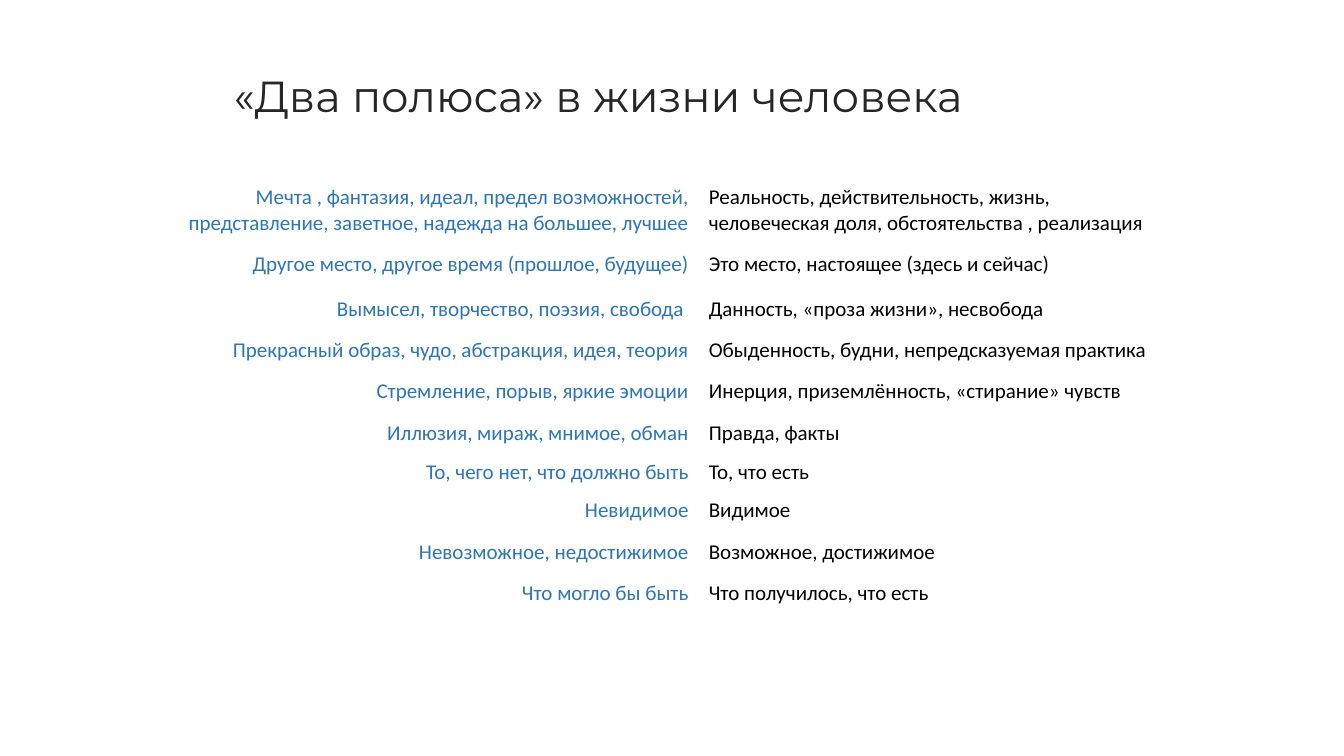
from dataclasses import dataclass

from lxml.etree import SubElement
from pptx import Presentation
from pptx.dml.color import RGBColor
from pptx.enum.text import MSO_ANCHOR, MSO_AUTO_SIZE, PP_ALIGN
from pptx.oxml.ns import qn
from pptx.util import Inches, Pt


@dataclass(frozen=True)
class Theme:
    title_font: str = "Montserrat"
    body_font: str = "Calibri"
    title_size: float = 31
    body_size: float = 15
    title_color: str = "262626"
    dream_color: str = "2E75B6"
    reality_color: str = "000000"
    background: str = "FFFFFF"
    border: float = 1
    heavy_border: float = 3


POLES = [
    ("Мечта , фантазия, идеал, предел возможностей, представление, заветное, надежда на большее, лучшее",
     "Реальность, действительность, жизнь, человеческая доля, обстоятельства , реализация"),
    ("Другое место, другое время (прошлое, будущее)", "Это место, настоящее (здесь и сейчас)"),
    ("Вымысел, творчество, поэзия, свобода ", "Данность, «проза жизни», несвобода"),
    ("Прекрасный образ, чудо, абстракция, идея, теория", "Обыденность, будни, непредсказуемая практика"),
    ("Стремление, порыв, яркие эмоции", "Инерция, приземлённость, «стирание» чувств"),
    ("Иллюзия, мираж, мнимое, обман", "Правда, факты"),
    ("То, чего нет, что должно быть", "То, что есть"),
    ("Невидимое", "Видимое"),
    ("Невозможное, недостижимое", "Возможное, достижимое"),
    ("Что могло бы быть", "Что получилось, что есть"),
]
ROW_HEIGHT = 5.47
SPECIAL_HEIGHTS = {1: 6.27, 6: 4.8}


class PolesSlide:
    """Holds the theme and the slide; lengths are percentages of the slide's size."""

    def __init__(self, deck, theme):
        self.deck, self.theme = deck, theme
        self.slide = deck.slides.add_slide(deck.slide_layouts[5])
        fill = self.slide.background.fill
        fill.solid()
        fill.fore_color.rgb = RGBColor.from_string(theme.background)

    def across(self, percent):
        return round(self.deck.slide_width * percent / 100)

    def down(self, percent):
        return round(self.deck.slide_height * percent / 100)

    def style(self, paragraph, font, size, color, align):
        paragraph.alignment = align
        paragraph.font.name = font
        paragraph.font.size = Pt(size)
        paragraph.font.color.rgb = RGBColor.from_string(color)

    def title(self, text, left, top, width, height, indent, lift):
        heading = self.slide.shapes.title
        heading.left, heading.top = self.across(left), self.down(top)
        heading.width, heading.height = self.across(width), self.down(height)
        frame = heading.text_frame
        frame.text = text
        frame.word_wrap = True
        frame.auto_size = MSO_AUTO_SIZE.NONE
        frame.vertical_anchor = MSO_ANCHOR.MIDDLE
        frame.margin_left, frame.margin_bottom = self.across(indent), self.down(lift)
        frame.paragraphs[0].line_spacing = 0.9
        self.style(frame.paragraphs[0], self.theme.title_font, self.theme.title_size,
                   self.theme.title_color, PP_ALIGN.LEFT)

    def borders(self, cell, heavy_side):
        properties = cell._tc.get_or_add_tcPr()
        for side in ("L", "R", "T", "B"):
            points = self.theme.heavy_border if side == heavy_side else self.theme.border
            line = SubElement(properties, qn(f"a:ln{side}"), w=str(Pt(points)))
            SubElement(SubElement(line, qn("a:solidFill")), qn("a:srgbClr"), val=self.theme.background)

    def cell(self, cell, text, color, align, heavy_side):
        self.borders(cell, heavy_side)
        cell.fill.background()
        cell.vertical_anchor = MSO_ANCHOR.MIDDLE
        cell.text = text
        self.style(cell.text_frame.paragraphs[0], self.theme.body_font,
                   self.theme.body_size, color, align)

    def table(self, pairs, left, top, widths, heights, indent):
        poles = self.slide.shapes.add_table(
            len(pairs), len(widths), self.across(left), self.down(top),
            self.across(sum(widths)), self.down(sum(heights))).table
        poles.first_row = poles.horz_banding = False
        for column, width in zip(poles.columns, widths):
            column.width = self.across(width)
        for index, (row, height, (dream, reality)) in enumerate(zip(poles.rows, heights, pairs)):
            row.height = self.down(height)
            heavy_side = {0: "B", 1: "T"}.get(index)
            dream_cell, reality_cell = row.cells
            self.cell(dream_cell, dream, self.theme.dream_color, PP_ALIGN.RIGHT, heavy_side)
            self.cell(reality_cell, reality, self.theme.reality_color, PP_ALIGN.LEFT, heavy_side)
            dream_cell.margin_left = self.across(indent)


def main():
    deck = Presentation()
    deck.slide_width, deck.slide_height = Inches(13.33), Inches(7.5)
    page = PolesSlide(deck, Theme())

    # Heading
    page.title("«Два полюса» в жизни человека", left=2.25, top=6.67, width=79.89, height=17.2,
               indent=15.15, lift=5.07)

    # Dream on the left, reality on the right
    heights = [SPECIAL_HEIGHTS.get(index, ROW_HEIGHT) for index in range(len(POLES))]
    page.table(POLES, left=4.58, top=23.73, widths=(47.41, 34.21), heights=heights, indent=4.5)

    deck.save("out.pptx")


if __name__ == "__main__":
    main()
